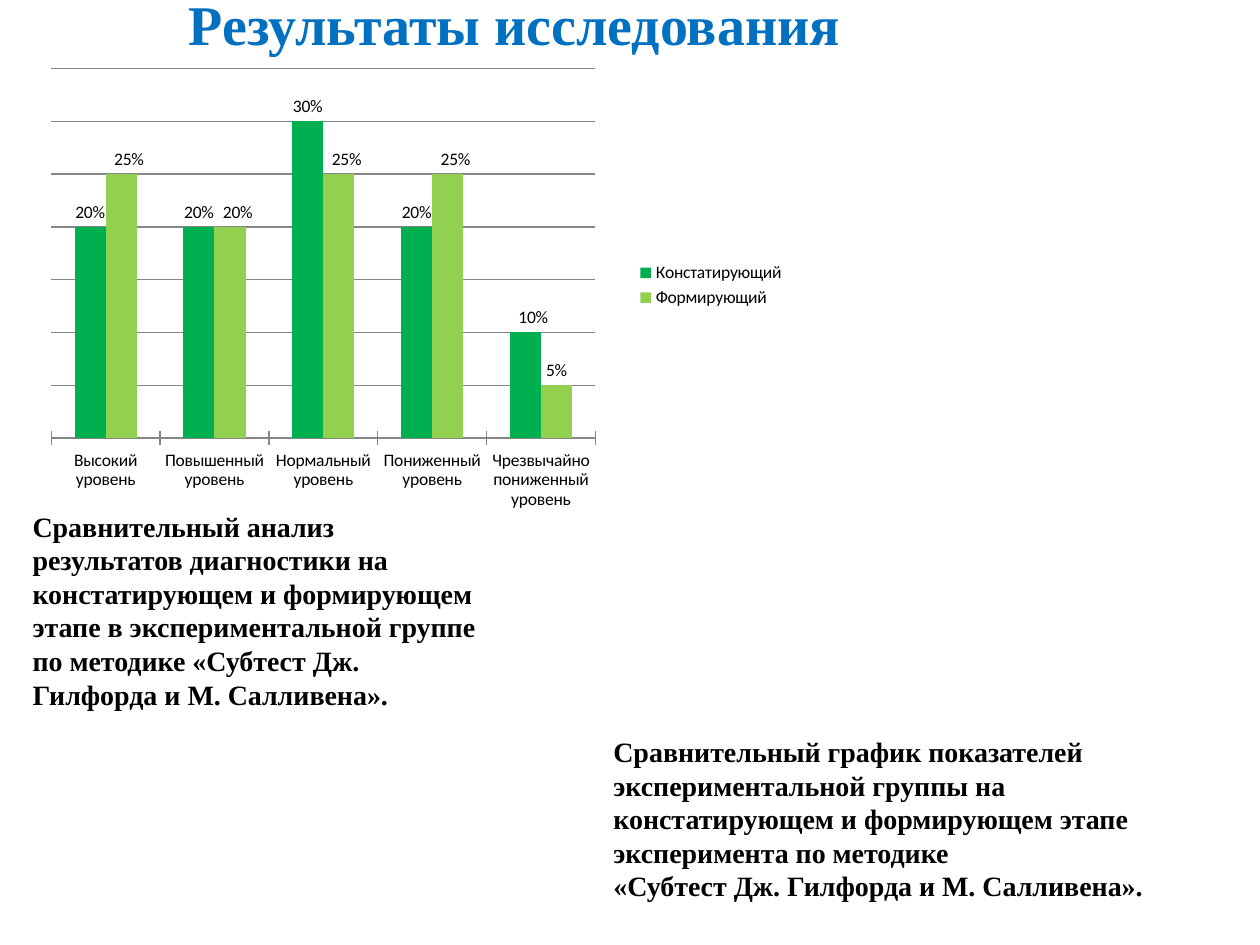
"""Build the research results slide with a column chart and two captions."""
from dataclasses import dataclass

from pptx import Presentation
from pptx.chart.data import CategoryChartData
from pptx.dml.color import RGBColor
from pptx.enum import chart as ch, text as tx
from pptx.oxml import parse_xml
from pptx.oxml.ns import nsdecls
from pptx.util import Inches, Pt

SERIF = "Times New Roman"
GRAY = "868686"
LEVELS = ["Высокий", "Повышенный", "Нормальный", "Пониженный", "Чрезвычайно пониженный"]


@dataclass
class Stage:
    """One series, with label shifts by point as a share of chart width."""
    name: str
    values: tuple[float, ...]
    color: str
    shifts: dict[int, float]


@dataclass
class Caption:
    """A bold paragraph whose lines are separated by line breaks."""
    left: float
    top: float
    width: float
    height: float
    anchor: tx.MSO_ANCHOR
    lines: tuple[str, ...]


STAGES = [
    Stage("Констатирующий", (0.2, 0.2, 0.3, 0.2, 0.1), "00B050", {4: 0.01}),
    Stage("Формирующий", (0.25, 0.2, 0.25, 0.25, 0.05), "92D050",
          {0: 0.01, 1: 0.01, 2: 0.01, 3: 0.01}),
]
CAPTIONS = [
    Caption(4.77, 5.78, 5, 1.45, tx.MSO_ANCHOR.TOP, (
        "Сравнительный график показателей экспериментальной группы на "
        "констатирующем и формирующем этапе эксперимента по методике",
        "«Субтест Дж. Гилфорда и М. Салливена».")),
    Caption(0.16, 3.98, 3.75, 1.72, tx.MSO_ANCHOR.MIDDLE, (
        "Сравнительный анализ результатов диагностики на констатирующем и "
        "формирующем этапе в экспериментальной группе по методике "
        "«Субтест Дж. Гилфорда и М. Салливена».",)),
]


def rgb(color: str) -> RGBColor:
    """Turn a hex string into a colour."""
    return RGBColor.from_string(color)


def add_run(paragraph, words: str, size: float, color: str) -> None:
    """Append a bold serif run."""
    run = paragraph.add_run()
    run.text = words
    run.font.name, run.font.size, run.font.bold = SERIF, Pt(size), True
    run.font.color.rgb = rgb(color)


def add_title(slide) -> None:
    """Place and format the slide title."""
    title = slide.shapes.title
    title.left, title.top = Inches(0), Inches(-0.16)
    title.width, title.height = Inches(8.17), Inches(0.69)
    title.text_frame.vertical_anchor = tx.MSO_ANCHOR.MIDDLE
    heading = title.text_frame.paragraphs[0]
    heading.alignment = tx.PP_ALIGN.CENTER
    add_run(heading, "Результаты исследования", 32, "0070C0")


def add_caption(slide, caption: Caption) -> None:
    """Draw one caption."""
    box = slide.shapes.add_textbox(Inches(caption.left), Inches(caption.top),
                                   Inches(caption.width), Inches(caption.height))
    frame = box.text_frame
    frame.word_wrap = True
    frame.auto_size = tx.MSO_AUTO_SIZE.SHAPE_TO_FIT_TEXT
    frame.vertical_anchor = caption.anchor
    paragraph = frame.paragraphs[0]
    for index, line in enumerate(caption.lines):
        if index:
            paragraph.add_line_break()
        add_run(paragraph, line, 16, "000000")


def manual_layout(target: str = "", **places: float):
    """Make a chart layout element from named positions."""
    parts = f'<c:layoutTarget val="{target}"/>' if target else ""
    if target:
        parts += '<c:xMode val="edge"/><c:yMode val="edge"/>'
    parts += "".join(f'<c:{key} val="{value}"/>' for key, value in places.items())
    return parse_xml(f'<c:layout {nsdecls("c")}><c:manualLayout>{parts}'
                     "</c:manualLayout></c:layout>")


def style_series(series, stage: Stage) -> None:
    """Colour a series and label its columns."""
    series.format.fill.solid()
    series.format.fill.fore_color.rgb = rgb(stage.color)
    series.invert_if_negative = False
    labels = series.data_labels
    labels.show_value = True
    labels.number_format, labels.number_format_is_linked = "0%", False
    labels.position = ch.XL_LABEL_POSITION.OUTSIDE_END
    for index in stage.shifts:
        series.points[index].data_label.position = ch.XL_LABEL_POSITION.OUTSIDE_END


def add_levels_chart(slide) -> None:
    """Draw the columns comparing both stages."""
    data = CategoryChartData(number_format="0%")
    data.categories = [f"{level} уровень" for level in LEVELS]
    for stage in STAGES:
        data.add_series(stage.name, stage.values)
    chart = slide.shapes.add_chart(ch.XL_CHART_TYPE.COLUMN_CLUSTERED, Inches(0.16),
                                   Inches(0.31), Inches(6.17), Inches(3.91), data).chart
    chart.font.name, chart.font.size = "Calibri", Pt(10)
    chart.font.color.rgb = rgb("000000")
    chart.has_title = False
    chart.has_legend = True
    chart.legend.position = ch.XL_LEGEND_POSITION.RIGHT
    chart.legend.include_in_layout = False

    percent = chart.value_axis
    percent.minimum_scale, percent.maximum_scale, percent.major_unit = 0, 0.35, 0.05
    percent.has_major_gridlines = True
    percent.visible = False
    levels = chart.category_axis
    levels.major_tick_mark = ch.XL_TICK_MARK.CROSS
    for line in (percent.major_gridlines.format.line, levels.format.line):
        line.color.rgb = rgb(GRAY)
        line.width = Pt(0.75)

    plot = chart.plots[0]
    plot.gap_width, plot.overlap, plot.vary_by_categories = 150, 0, False
    for series, stage in zip(plot.series, STAGES):
        style_series(series, stage)

    shifts = [shift for stage in STAGES for shift in stage.shifts.values()]
    for label, shift in zip(chart.element.xpath(".//c:dLbl"), shifts):
        label.insert(1, manual_layout(x=shift, y=0))
    area = chart.element.xpath(".//c:plotArea")[0]
    for layout in area.xpath("./c:layout"):
        area.remove(layout)
    area.insert(0, manual_layout("inner", x=0.04, y=0.06, w=0.7, h=0.75))


def main() -> None:
    """Assemble and save the slide."""
    deck = Presentation()
    deck.slide_width, deck.slide_height = Inches(10), Inches(7.5)
    slide = deck.slides.add_slide(deck.slide_layouts[5])
    add_title(slide)
    add_levels_chart(slide)
    for caption in CAPTIONS:
        add_caption(slide, caption)
    deck.save("out.pptx")


if __name__ == "__main__":
    main()
